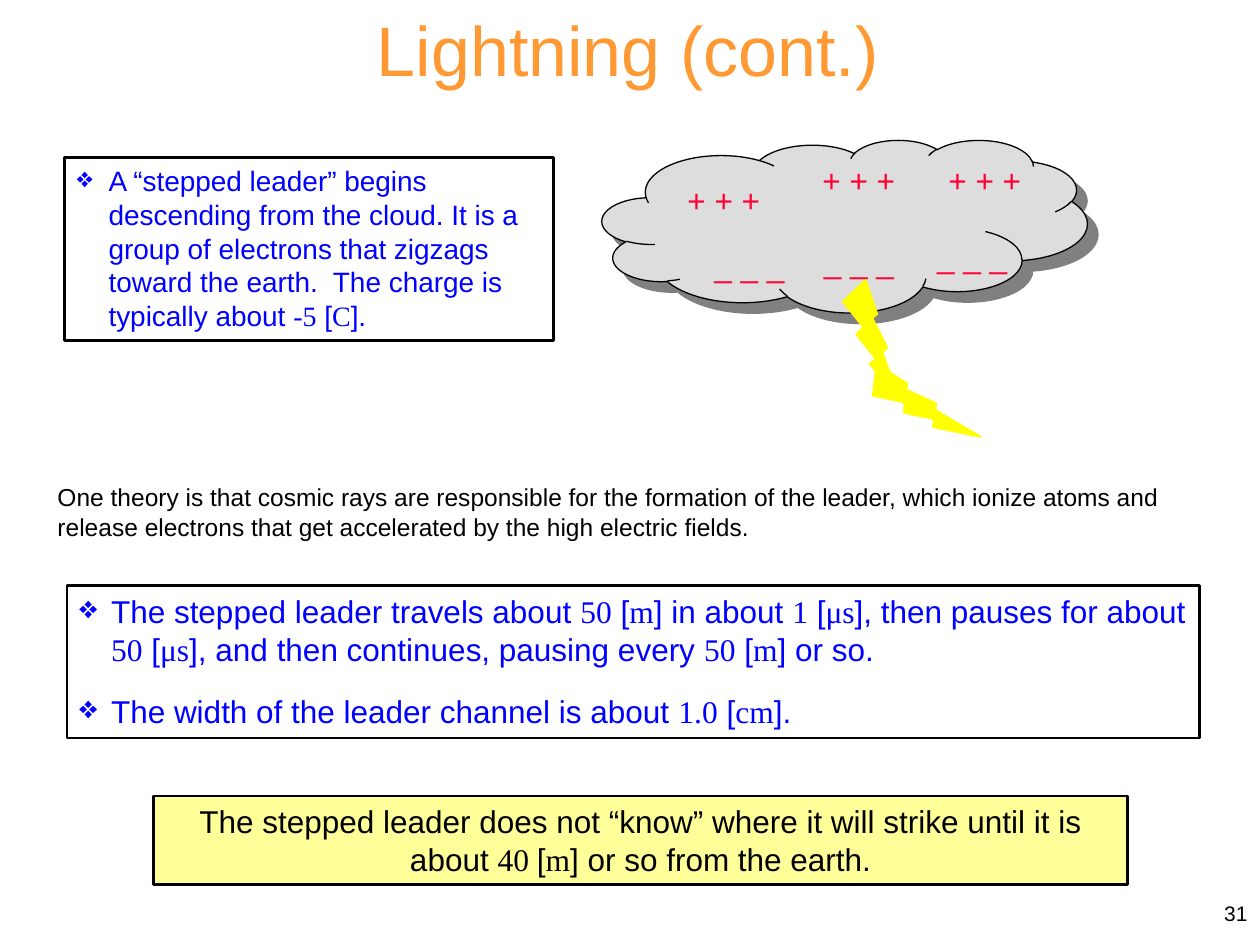
from lxml.etree import SubElement
from pptx import Presentation
from pptx.dml.color import RGBColor
from pptx.enum.shapes import MSO_SHAPE
from pptx.enum.text import MSO_ANCHOR, MSO_AUTO_SIZE, PP_ALIGN
from pptx.oxml.ns import qn
from pptx.util import Cm, Pt

BLACK = RGBColor(0x00, 0x00, 0x00)
BLUE = RGBColor(0x00, 0x00, 0xFF)
ORANGE = RGBColor(0xFF, 0x99, 0x33)
RED = RGBColor(0xFF, 0x00, 0x33)
YELLOW = RGBColor(0xFF, 0xFF, 0x00)
PALE_YELLOW = RGBColor(0xFF, 0xFF, 0x99)
CLOUD_GREY = RGBColor(0xDD, 0xDD, 0xDD)
SHADOW_GREY = RGBColor(0x80, 0x80, 0x80)


class SlideBuilder:
    """Holds the page and its text style; bars in a text switch the font."""

    fonts = ("Arial", "Times New Roman")
    bullet = "❖"
    indent = Cm(0.64)

    def __init__(self, page):
        self.page = page

    def fill_text(self, box, lines, size, color, align=PP_ALIGN.LEFT,
                  bullets=False, anchor=MSO_ANCHOR.TOP, wrap=True, gap=14):
        frame = box.text_frame
        frame.word_wrap = wrap
        frame.auto_size = MSO_AUTO_SIZE.NONE
        frame.vertical_anchor = anchor
        for number, line in enumerate(lines):
            para = frame.add_paragraph() if number else frame.paragraphs[0]
            para.alignment = align
            if number:
                para.space_before = Pt(gap)
            for index, piece in enumerate(line.split("|")):
                span = para.add_run()
                span.text = piece
                span.font.name = self.fonts[index % 2]
                span.font.size = Pt(size)
                span.font.color.rgb = color
            if bullets:
                self.add_bullet(para)

    def add_bullet(self, para):
        properties = para._p.get_or_add_pPr()
        properties.set("marL", str(self.indent))
        properties.set("indent", str(-self.indent))
        SubElement(properties, qn("a:buChar")).set("char", self.bullet)

    def title(self, place, text, size, color):
        box = self.page.shapes.title
        box.left, box.top, box.width, box.height = map(Cm, place)
        self.fill_text(box, [text], size, color, PP_ALIGN.CENTER)

    def label(self, place, text, size, color, parent=None, **style):
        shapes = (parent or self.page).shapes
        box = shapes.add_textbox(*map(Cm, place))
        self.fill_text(box, [text], size, color, **style)

    def shape(self, kind, place, fill, line, width, parent=None):
        box = (parent or self.page).shapes.add_shape(kind, *map(Cm, place))
        box.shadow.inherit = False
        if fill is None:
            box.fill.background()
        else:
            box.fill.solid()
            box.fill.fore_color.rgb = fill
        box.line.color.rgb = line
        box.line.width = Pt(width)
        return box

    def panel(self, place, lines, size, color, fill=None, **style):
        box = self.shape(MSO_SHAPE.RECTANGLE, place, fill, BLACK, 1.5)
        self.fill_text(box, lines, size, color, **style)

    def cloud(self, place, parent):
        box = self.shape(MSO_SHAPE.CLOUD, place, CLOUD_GREY, BLACK, 0.75, parent)
        effects = box._element.spPr.find(qn("a:effectLst"))
        shadow = SubElement(effects, qn("a:outerShdw"), dist=str(Pt(8.5)),
                            dir=str(45 * 60000), algn="ctr", rotWithShape="0")
        SubElement(shadow, qn("a:srgbClr"), val=str(SHADOW_GREY))

    def bolt(self, left, top, rotation=0):
        box = self.shape(MSO_SHAPE.LIGHTNING_BOLT, (left, top, 1.17, 2.46),
                         YELLOW, YELLOW, 1)
        box.rotation = rotation


def main():
    deck = Presentation()
    deck.slide_width, deck.slide_height = Cm(25.4), Cm(19.05)
    page = deck.slides.add_slide(deck.slide_layouts[5])
    slide = SlideBuilder(page)

    # Title and facts about the leader
    slide.title((6.58, 0, 12.14, 1.96), "Lightning (cont.)", 40, ORANGE)
    slide.panel(
        (1.3, 3.18, 9.86, 3.68),
        ["A “stepped leader” begins descending from the cloud. It is a group of "
         "electrons that zigzags toward the earth.  The charge is typically about "
         "|-5| [|C|]."],
        16, BLUE, bullets=True)
    slide.panel(
        (1.35, 11.81, 22.83, 3.07),
        ["The stepped leader travels about |50| [|m|] in about |1| [|μs|], then "
         "pauses for about |50| [|μs|], and then continues, pausing every "
         "|50| [|m|] or so.",
         "The width of the leader channel is about |1.0| [|cm|]."],
        18, BLUE, bullets=True)
    slide.panel(
        (3.1, 16.05, 19.63, 1.78),
        ["The stepped leader does not “know” where it will strike until it is "
         "about |40 |[|m|] or so from the earth."],
        18, BLACK, fill=PALE_YELLOW, align=PP_ALIGN.CENTER)

    # Charged cloud
    storm = page.shapes.add_group_shape()
    slide.cloud((12.14, 2.82, 9.78, 3.48), storm)
    charges = {
        "_ _ _": [(14.15, 4.83), (16.36, 4.75), (18.64, 4.65)],
        "+ + +": [(13.61, 3.53), (16.33, 3.12), (18.87, 3.12)],
    }
    for signs, corners in charges.items():
        for left, top in corners:
            slide.label((left, top, 1.96, 1.02), signs, 18, RED,
                        parent=storm, wrap=False)

    # Stepped leader
    slide.bolt(16.99, 5.64)
    slide.bolt(17.96, 6.99, rotation=321)

    # Theory and page number
    slide.label(
        (0.91, 9.6, 23.32, 1.45),
        "One theory is that cosmic rays are responsible for the formation of the "
        "leader, which ionize atoms and release electrons that get accelerated by "
        "the high electric fields.",
        14, BLACK)
    slide.label((20.12, 17.78, 5.28, 1.27), "31", 12, BLACK,
                align=PP_ALIGN.RIGHT, anchor=MSO_ANCHOR.MIDDLE)

    deck.save("out.pptx")


if __name__ == "__main__":
    main()
